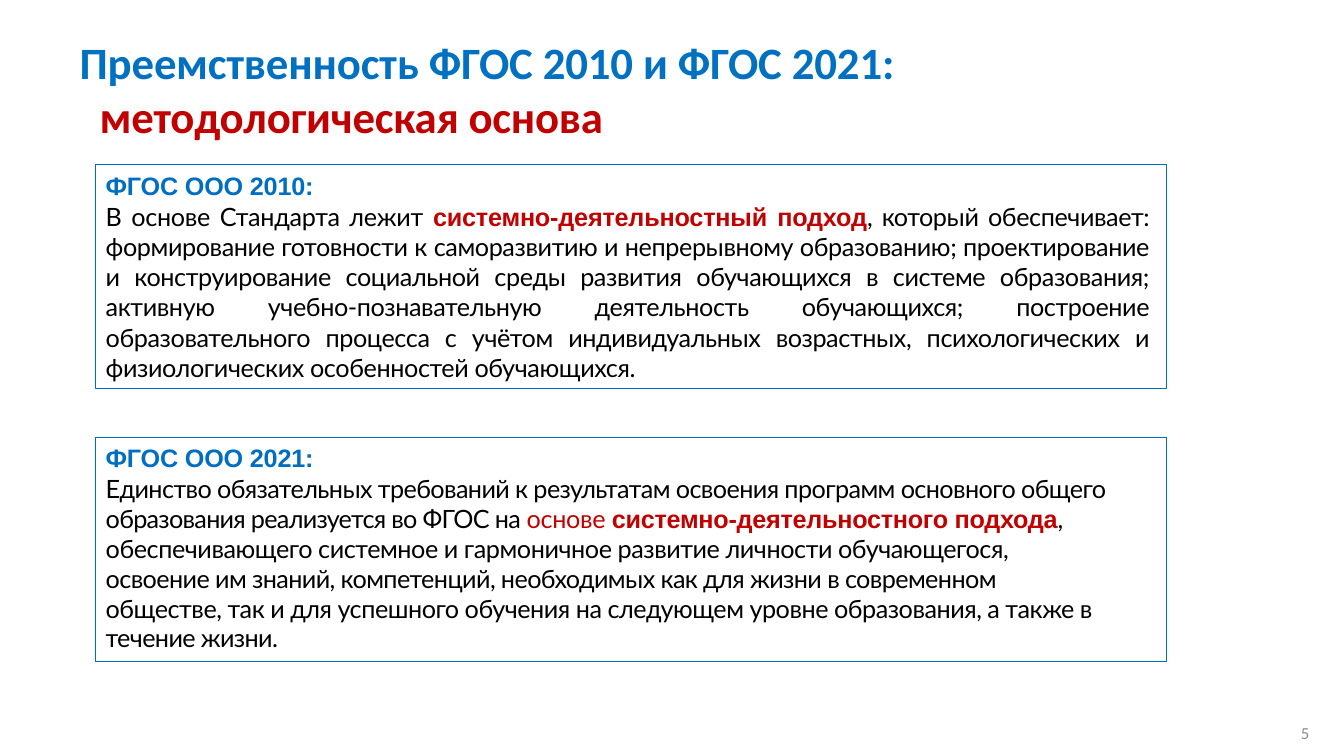
from dataclasses import dataclass

from pptx import Presentation
from pptx.dml.color import RGBColor
from pptx.enum.shapes import MSO_SHAPE as Preset
from pptx.enum.text import MSO_ANCHOR as Anchor, PP_ALIGN as Align
from pptx.util import Pt


@dataclass(frozen=True)
class Theme:
    blue: RGBColor = RGBColor(0x00, 0x70, 0xC0)
    standard_blue: RGBColor = RGBColor(0x00, 0x6E, 0xC0)
    red: RGBColor = RGBColor(0xC0, 0x00, 0x00)
    black: RGBColor = RGBColor(0x00, 0x00, 0x00)
    gray: RGBColor = RGBColor(0x8C, 0x8C, 0x8C)
    title_size: int = 32
    body_size: int = 18
    number_size: int = 12
    title_font: str = "Calibri"
    body_font: str = "Lato"
    accent_font: str = "Arial"


THEME = Theme()
BODY = (THEME.body_font, THEME.black, False)
RED = (THEME.body_font, THEME.red, False)
STRONG = (THEME.accent_font, THEME.red, True)

STANDARD_2010 = [
    [
        ("В основе Стандарта лежит ", -0.2, BODY),
        ("системно-деятельностный подход", -0.15, STRONG),
        (", который обеспечивает: формирование готовности к саморазвитию "
         "и непрерывному образованию; проектирование и конструирование "
         "социальной среды развития обучающихся в системе образования; "
         "активную учебно-познавательную деятельность обучающихся; "
         "построение образовательного процесса с учётом индивидуальных "
         "возрастных, психологических и физиологических особенностей "
         "обучающихся.", -0.28, BODY),
    ],
]
STANDARD_2021 = [
    [("Единство обязательных требований к результатам освоения программ "
      "основного общего ", -0.42, BODY)],
    [
        ("образования реализуется во ФГОС на ", -0.5, BODY),
        ("основе ", -0.2, RED),
        ("системно-деятельностного подхода", -0.2, STRONG),
        (", ", -0.2, BODY),
    ],
    [("обеспечивающего системное и гармоничное развитие личности "
      "обучающегося, ", -0.32, BODY)],
    [("освоение им знаний, компетенций, необходимых как для жизни "
      "в современном ", -0.42, BODY)],
    [("обществе, так и для успешного обучения на следующем уровне "
      "образования, а также в ", -0.35, BODY)],
    [("течение жизни.", -0.45, BODY)],
]


def set_font(font, name, size, color, bold=False):
    font.name = name
    font.size = Pt(size)
    font.color.rgb = color
    font.bold = bold


def set_box(shape, left, top, width, height):
    shape.left, shape.top = Pt(left), Pt(top)
    shape.width, shape.height = Pt(width), Pt(height)


def set_insets(frame, left=0, top=0, right=0, bottom=0):
    frame.margin_left, frame.margin_top = Pt(left), Pt(top)
    frame.margin_right, frame.margin_bottom = Pt(right), Pt(bottom)
    frame.word_wrap = True


def add_run(paragraph, text, tracking):
    run = paragraph.add_run()
    run.text = text
    run.font._element.set("spc", str(round(tracking * 100)))
    return run


def add_title(slide, left, top, width, height):
    title = slide.shapes.title
    set_box(title, left, top, width, height)
    frame = title.text_frame
    set_insets(frame, top=1.6)
    frame.vertical_anchor = Anchor.MIDDLE
    lines = [
        ("Преемственность ФГОС 2010 и ФГОС 2021:", -0.12, THEME.blue, 0.7),
        ("методологическая основа", -0.2, THEME.red, 15),
    ]
    for index, (text, tracking, color, indent) in enumerate(lines):
        paragraph = frame.add_paragraph() if index else frame.paragraphs[0]
        paragraph.alignment = Align.LEFT
        paragraph.space_before = Pt(0)
        paragraph._p.get_or_add_pPr().set("marL", str(Pt(indent)))
        set_font(paragraph.font, THEME.title_font, THEME.title_size, color, True)
        add_run(paragraph, text, tracking)


def add_standard(slide, left, top, width, height, heading, lines,
                 alignment, inset_top, spacing, gap):
    panel = slide.shapes.add_shape(
        Preset.RECTANGLE, Pt(left), Pt(top), Pt(width), Pt(height))
    panel.shadow.inherit = False
    panel.fill.background()
    panel.line.color.rgb = THEME.standard_blue
    panel.line.width = Pt(0.72)
    frame = panel.text_frame
    set_insets(frame, left=7.2, top=inset_top, right=12)
    frame.vertical_anchor = Anchor.TOP

    name = frame.paragraphs[0]
    name.alignment = alignment
    set_font(name.font, THEME.accent_font, THEME.body_size,
             THEME.standard_blue, True)
    add_run(name, heading, -0.15)

    basis = frame.add_paragraph()
    basis.alignment = alignment
    basis.line_spacing = spacing
    basis.space_before = Pt(gap)
    for index, line in enumerate(lines):
        if index:
            basis.add_line_break()
        for text, tracking, (font, color, bold) in line:
            run = add_run(basis, text, tracking)
            set_font(run.font, font, THEME.body_size, color, bold)


def add_page_number(slide, left, top, width, height, number):
    page = slide.shapes.add_textbox(Pt(left), Pt(top), Pt(width), Pt(height))
    frame = page.text_frame
    set_insets(frame)
    frame.vertical_anchor = Anchor.MIDDLE
    paragraph = frame.paragraphs[0]
    paragraph.alignment = Align.RIGHT
    paragraph.line_spacing = Pt(18.9)
    set_font(paragraph.font, THEME.title_font, THEME.number_size, THEME.gray)
    add_run(paragraph, number, -0.1)


def main():
    deck = Presentation()
    deck.slide_width, deck.slide_height = Pt(960), Pt(540)
    slide = deck.slides.add_slide(deck.slide_layouts[5])
    left, width, height = 68.4, 764.6, 159.8
    add_title(slide, 56.2, 23, 867.6, 78.5)
    add_page_number(slide, 911.5, 511.2, 23.8, 20.2, "5")
    add_standard(slide, left, 312.5, width, height, "ФГОС ООО 2021:",
                 STANDARD_2021, Align.LEFT, 3.6, 0.99, 1.2)
    add_standard(slide, left, 117.4, width, height, "ФГОС ООО 2010:",
                 STANDARD_2010, Align.JUSTIFY, 4.5, 1.0, 0)
    deck.save("out.pptx")


if __name__ == "__main__":
    main()
